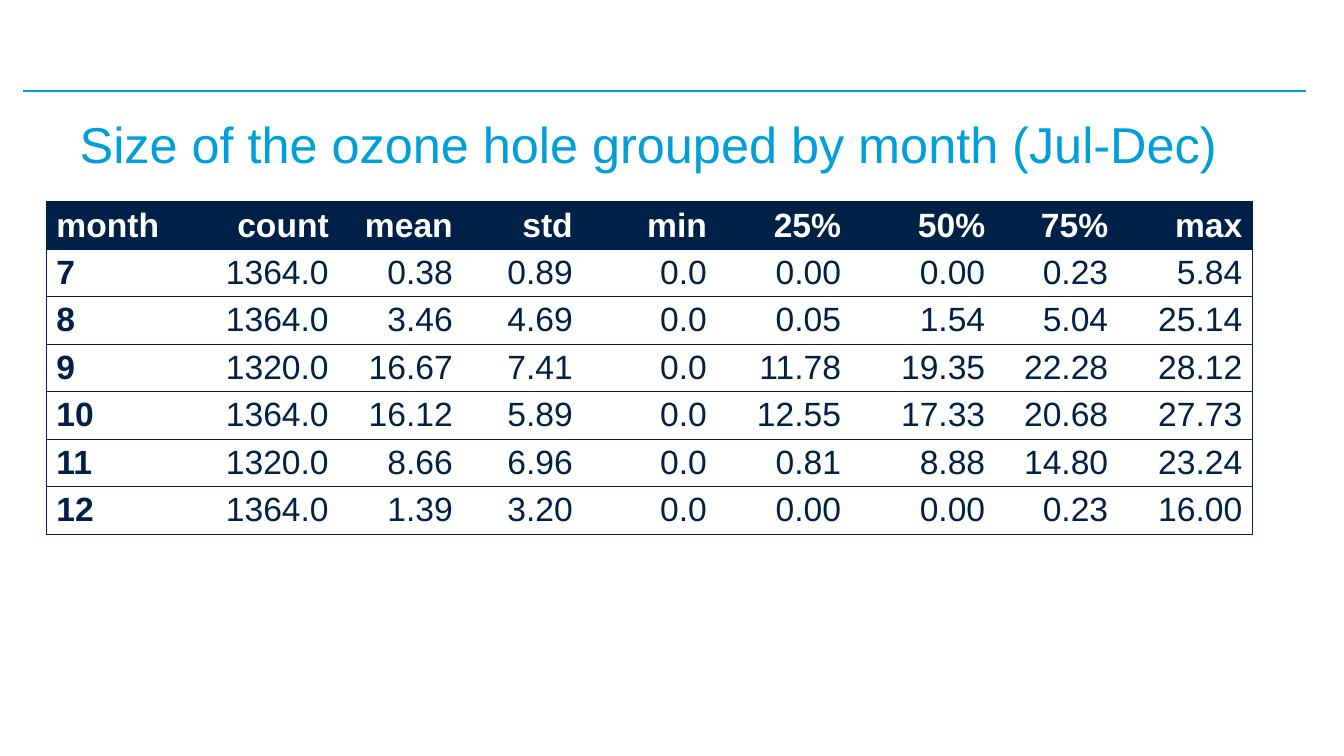
from dataclasses import dataclass

from lxml import etree
from pptx import Presentation
from pptx import util as u
from pptx.dml.color import RGBColor
from pptx.enum import shapes, text
from pptx.oxml import ns

NAVY = RGBColor(0x00, 0x21, 0x47)
SKY = RGBColor(0x00, 0x9F, 0xDA)
WHITE = RGBColor(0xFF, 0xFF, 0xFF)

WIDTH, HEIGHT = u.Inches(13.33), u.Inches(7.5)
ROW_HEIGHT = 6.28
TABLE_LEFT, TABLE_TOP = 3.45, 26.67
BORDER_WIDTH = u.Pt(0.5)
MARGINS = {"margin_top": u.Inches(0.04), "margin_bottom": u.Inches(0.04)}


@dataclass(frozen=True)
class Column:
    heading: str
    width: float
    values: tuple[str, ...]


COLUMNS = (
    Column("month", 11.33, ("7", "8", "9", "10", "11", "12")),
    Column("count", 10.43, ("1364.0", "1364.0", "1320.0", "1364.0", "1320.0", "1364.0")),
    Column("mean", 9.23, ("0.38", "3.46", "16.67", "16.12", "8.66", "1.39")),
    Column("std", 8.93, ("0.89", "4.69", "7.41", "5.89", "6.96", "3.20")),
    Column("min", 9.98, ("0.0",) * 6),
    Column("25%", 9.98, ("0.00", "0.05", "11.78", "12.55", "0.81", "0.00")),
    Column("50%", 10.73, ("0.00", "1.54", "19.35", "17.33", "8.88", "0.00")),
    Column("75%", 9.15, ("0.23", "5.04", "22.28", "20.68", "14.80", "0.23")),
    Column("max", 9.98, ("5.84", "25.14", "28.12", "27.73", "23.24", "16.00")),
)


def across(percent: float) -> u.Emu:
    return u.Emu(round(WIDTH * percent / 100))


def down(percent: float) -> u.Emu:
    return u.Emu(round(HEIGHT * percent / 100))


def apply(target, values: dict) -> None:
    for name, value in values.items():
        setattr(target, name, value)


def write(p, content: str, color: RGBColor, font: dict) -> None:
    r = p.add_run()
    r.text = content
    apply(r.font, {"name": "Arial", **font})
    r.font.color.rgb = color


def add_rule(slide) -> None:
    line = slide.shapes.add_connector(
        shapes.MSO_CONNECTOR.STRAIGHT, across(1.73), down(12), across(97.15), down(12))
    line.line.color.rgb = SKY
    line.line.width = u.Pt(1.5)
    etree.SubElement(line._element.spPr, ns.qn("a:effectLst"))


def set_title(slide) -> None:
    sp = slide.shapes.title
    apply(sp, {"left": across(5.18), "top": down(14.8),
               "width": across(91.6), "height": down(10.13)})
    tf = sp.text_frame
    apply(tf, {"word_wrap": True, "auto_size": text.MSO_AUTO_SIZE.NONE,
               "vertical_anchor": text.MSO_ANCHOR.MIDDLE,
               "margin_bottom": u.Inches(0.11)})
    p = tf.paragraphs[0]
    apply(p, {"alignment": text.PP_ALIGN.LEFT, "line_spacing": 0.9})
    write(p, "Size of the ozone hole grouped by month (Jul-Dec)", SKY, {"size": u.Pt(36)})


def set_borders(cell, sides: str) -> None:
    tc_pr = cell._tc.get_or_add_tcPr()
    for side in "LRTB":
        line = etree.SubElement(tc_pr, ns.qn(f"a:ln{side}"), w=str(BORDER_WIDTH))
        if side in sides:
            fill = etree.SubElement(line, ns.qn("a:solidFill"))
            etree.SubElement(fill, ns.qn("a:srgbClr"), val=str(NAVY))
        else:
            etree.SubElement(line, ns.qn("a:noFill"))


def format_cell(cell, content: str, header: bool, first: bool, last: bool) -> None:
    set_borders(cell, "TB" + "L" * first + "R" * last)
    cell.fill.solid()
    cell.fill.fore_color.rgb = NAVY if header else WHITE
    apply(cell, {"vertical_anchor": text.MSO_ANCHOR.MIDDLE, **MARGINS})
    p = cell.text_frame.paragraphs[0]
    p.alignment = text.PP_ALIGN.LEFT if first else text.PP_ALIGN.RIGHT
    write(p, content, WHITE if header else NAVY,
          {"size": u.Pt(24), "bold": header or first})


def add_statistics(slide) -> None:
    rows = len(COLUMNS[0].values) + 1
    table = slide.shapes.add_table(
        rows, len(COLUMNS), across(TABLE_LEFT), down(TABLE_TOP),
        across(sum(c.width for c in COLUMNS)), down(rows * ROW_HEIGHT)).table
    apply(table, {"first_row": False, "horz_banding": False})
    for row in table.rows:
        row.height = down(ROW_HEIGHT)
    for j, column in enumerate(COLUMNS):
        table.columns[j].width = across(column.width)
        for i, content in enumerate((column.heading, *column.values)):
            format_cell(table.cell(i, j), content, i == 0, j == 0, j == len(COLUMNS) - 1)


def main() -> None:
    prs = Presentation()
    apply(prs, {"slide_width": WIDTH, "slide_height": HEIGHT})
    slide = prs.slides.add_slide(prs.slide_layouts.get_by_name("Title Only"))
    add_rule(slide)
    set_title(slide)
    add_statistics(slide)
    prs.save("out.pptx")


if __name__ == "__main__":
    main()
